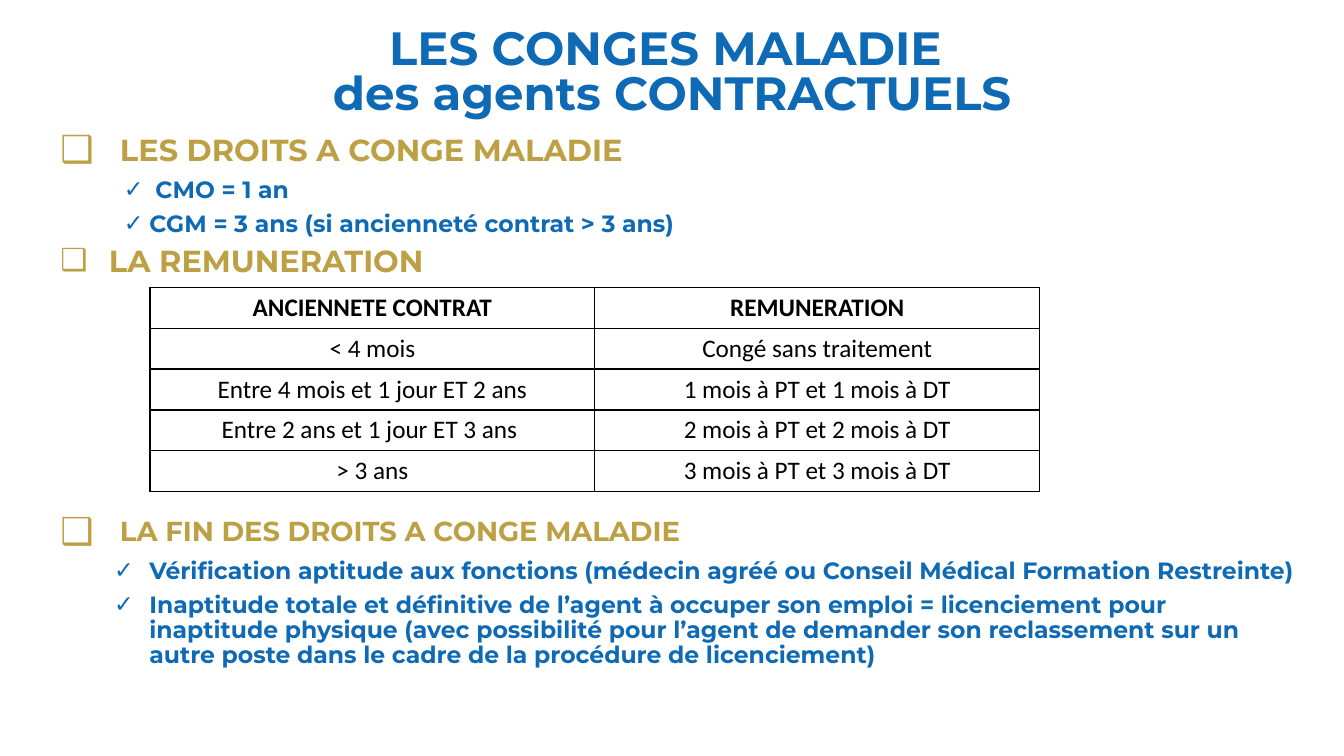
from lxml import etree
from pptx import Presentation
from pptx import util as u
from pptx.dml import color
from pptx.enum import text
from pptx.oxml import ns

BLUE, GOLD, BLACK = "0E6AB4", "BDA043", "000000"


def rgb(value):
    return color.RGBColor.from_string(value)


class SlideBuilder:
    """Holds the style and the current slide."""

    heading_font = "Montserrat"
    table_font = "Calibri"
    bullet_font = "Arial"

    def __init__(self, prs):
        self.s = prs.slides.add_slide(prs.slide_layouts[1])

    def style(self, p, size, hue, font, bold=True):
        p.font.size, p.font.name, p.font.bold = u.Pt(size), font, bold
        p.font.color.rgb = rgb(hue)

    def frame(self, sp, box, anchor):
        sp.left, sp.top, sp.width, sp.height = [u.Cm(v) for v in box]
        tf = sp.text_frame
        tf.word_wrap, tf.auto_size = True, text.MSO_AUTO_SIZE.NONE
        tf.vertical_anchor = anchor
        return tf

    def paragraphs(self, tf, lines):
        tf.text = "\n".join(lines)
        return tf.paragraphs

    def spacing(self, p, line, after=0):
        p.line_spacing = line
        p.space_before, p.space_after = u.Pt(0), u.Pt(after)

    def title(self, lines, box):
        tf = self.frame(self.s.shapes.title, box, text.MSO_ANCHOR.BOTTOM)
        for p in self.paragraphs(tf, lines):
            p.alignment = text.PP_ALIGN.CENTER
            self.spacing(p, 0.8)
            self.style(p, 33.3, BLUE, self.heading_font)

    def bullet(self, p, char, margin, hang, scale):
        pPr = p._p.get_or_add_pPr()
        pPr.set("marL", str(u.Cm(margin)))
        pPr.set("indent", str(-u.Cm(hang)))
        marks = [("a:buSzPct", "val", str(scale * 1000)),
                 ("a:buFont", "typeface", self.bullet_font),
                 ("a:buChar", "char", char)]
        # Bullet marks follow the three spacing elements
        for i, (tag, key, value) in enumerate(marks, start=3):
            pPr.insert(i, etree.Element(ns.qn(tag), {key: value}))

    def outline(self, items, box):
        tf = self.frame(self.s.placeholders[1], box, text.MSO_ANCHOR.TOP)
        ps = self.paragraphs(tf, [item[0] for item in items])
        for p, (_, char, size, margin, hang, scale, after) in zip(ps, items):
            self.spacing(p, 0.9, after)
            self.bullet(p, char, margin, hang, scale)
            self.style(p, size, GOLD if char == "❑" else BLUE, self.heading_font)

    def borders(self, cell):
        tcPr = cell._tc.get_or_add_tcPr()
        for i, side in enumerate(("lnL", "lnR", "lnT", "lnB")):
            ln = etree.Element(ns.qn("a:" + side), w=str(u.Pt(1)))
            fill = etree.SubElement(ln, ns.qn("a:solidFill"))
            etree.SubElement(fill, ns.qn("a:srgbClr"), val=BLACK)
            tcPr.insert(i, ln)

    def table(self, rows, box):
        left, top, width, height = [u.Cm(v) for v in box]
        tbl = self.s.shapes.add_table(len(rows), len(rows[0]), left, top, width, height).table
        tbl.horz_banding = tbl.first_row = False
        for r, row in enumerate(rows):
            for c, value in enumerate(row):
                cell = tbl.cell(r, c)
                cell.text = value
                cell.fill.background()
                self.borders(cell)
                p = cell.text_frame.paragraphs[0]
                p.alignment = text.PP_ALIGN.CENTER
                self.style(p, 18, BLACK, self.table_font, bold=r == 0)


def main():
    prs = Presentation()
    prs.slide_width, prs.slide_height = u.Cm(33.87), u.Cm(19.05)
    slide = SlideBuilder(prs)

    # Title
    slide.title(["LES CONGES MALADIE ", "des agents CONTRACTUELS"], (2.24, 0.55, 29.41, 2.59))

    # Outline: text, bullet, size, margin, hanging, bullet scale, space after
    slide.outline([
        ("LES DROITS A CONGE MALADIE", "❑", 21.7, 1.5, 1.5, 123, 7.5),
        ("CMO = 1 an", "✓", 16.8, 2.39, 0.79, 100, 6),
        ("CGM = 3 ans (si ancienneté contrat > 3 ans)", "✓", 16.8, 2.24, 0.64, 100, 6),
        ("LA REMUNERATION", "❑", 21.7, 1.22, 1.22, 100, 171),
        ("LA FIN DES DROITS A CONGE MALADIE", "❑", 19.6, 1.5, 1.5, 136, 8),
        ("Vérification aptitude aux fonctions (médecin agréé ou Conseil Médical "
         "Formation Restreinte)", "✓", 16.8, 2.24, 0.89, 100, 6),
        ("Inaptitude totale et définitive de l’agent à occuper son emploi = licenciement "
         "pour inaptitude physique (avec possibilité pour l’agent de demander son "
         "reclassement sur un autre poste dans le cadre de la procédure de licenciement)",
         "✓", 16.8, 2.24, 0.89, 100, 6),
    ], (1.27, 3.27, 31.75, 14.7))

    # Pay table
    slide.table([
        ("ANCIENNETE CONTRAT", "REMUNERATION"),
        ("< 4 mois", "Congé sans traitement"),
        ("Entre 4 mois et 1 jour ET 2 ans", "1 mois à PT et 1 mois à DT"),
        ("Entre 2 ans et 1 jour ET 3 ans ", "2 mois à PT et 2 mois à DT"),
        ("> 3 ans", "3 mois à PT et 3 mois à DT"),
    ], (3.78, 7.24, 22.42, 5.15))

    prs.save("out.pptx")


if __name__ == "__main__":
    main()
